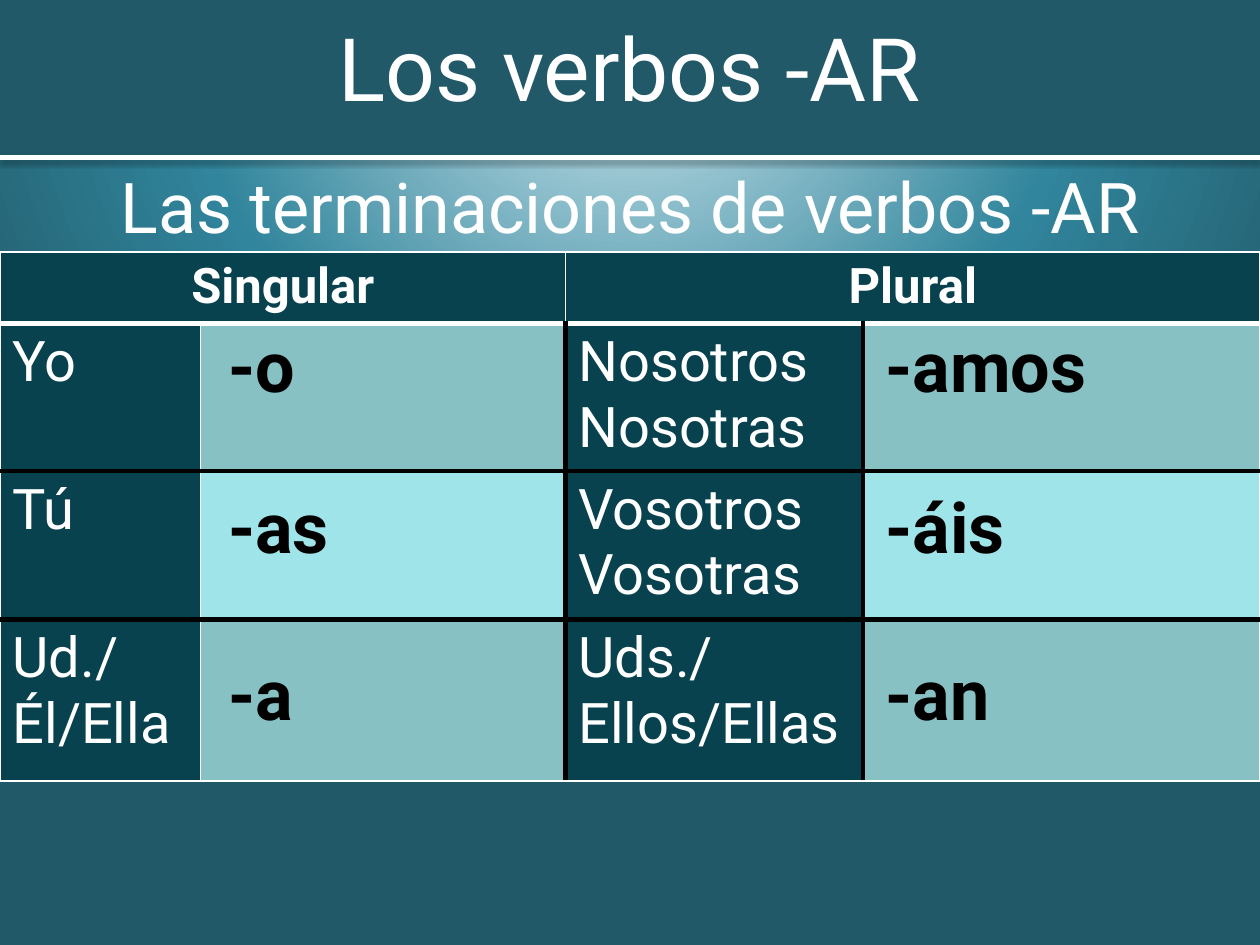
import dataclasses

import pptx
import pptx.dml.color
import pptx.enum.shapes
import pptx.enum.text
import pptx.oxml
import pptx.oxml.ns
import pptx.util
from pptx.util import Inches, Pt

FONT = "Roboto"
WHITE, BLACK = "FFFFFF", "000000"
BANNER, DARK = "215968", "08424E"
BANDS = ["87C1C3", "9FE4E9", "87C1C3"]
NS = pptx.oxml.ns.nsdecls("a", "p")
CENTER = pptx.enum.text.PP_ALIGN.CENTER
THIN, THICK, HEAVY = (WHITE, 1), (WHITE, 3), (BLACK, 3)


@dataclasses.dataclass
class TextStyle:
    size: int
    color: str = WHITE
    bold: bool = False
    align: object = None


@dataclasses.dataclass
class Ending:
    text: str
    left: float
    top: float
    width: float


TITLE = TextStyle(50, align=CENTER)
SUBTITLE = TextStyle(40, align=CENTER)
HEADER = TextStyle(28, bold=True, align=CENTER)
PRONOUN = TextStyle(32)
ENDING = TextStyle(40, BLACK, bold=True)

COLUMNS = [1.59, 2.9, 2.36, 3.15]
ROWS = [0.56, 1.17, 1.18, 1.28]
PRONOUNS = [
    (["Yo"], ["Nosotros", "Nosotras"]),
    (["Tú"], ["Vosotros", "Vosotras"]),
    (["Ud./Él/Ella"], ["Uds./Ellos/Ellas"]),
]
ENDINGS = [
    Ending("-o", 1.71, 2.55, 2.46),
    Ending("-as", 1.71, 3.83, 2.34),
    Ending("-a", 1.71, 5.15, 2.46),
    Ending("-amos", 6.93, 2.55, 2.82),
    Ending("-áis", 6.93, 3.83, 2.52),
    Ending("-an", 6.93, 5.15, 2.4),
]


def rgb(value: str) -> pptx.dml.color.RGBColor:
    return pptx.dml.color.RGBColor.from_string(value)


def write(tf, lines: list[str], style: TextStyle) -> None:
    for i, line in enumerate(lines):
        p = tf.add_paragraph() if i else tf.paragraphs[0]
        p.alignment = style.align
        r = p.add_run()
        r.text = line
        r.font.name = FONT
        r.font.size = Pt(style.size)
        r.font.bold = style.bold
        r.font.color.rgb = rgb(style.color)


def set_background(s) -> None:
    """Radial gradient centred above the slide."""
    stops = "".join(
        f'<a:gs pos="{pos * 1000}"><a:srgbClr val="{color}"/></a:gs>'
        for pos, color in [(0, "DBEEF4"), (57, "31859C"), (100, BANNER)]
    )
    bg = pptx.oxml.parse_xml(
        f'<p:bg {NS}><p:bgPr><a:gradFill rotWithShape="1"><a:gsLst>{stops}</a:gsLst>'
        '<a:path path="circle"><a:fillToRect l="50000" t="-80000" r="50000" b="180000"/>'
        "</a:path></a:gradFill><a:effectLst/></p:bgPr></p:bg>"
    )
    s._element.cSld.insert(0, bg)


def add_text(s, text: str, top: float, height: float, style: TextStyle):
    tf = s.shapes.add_textbox(0, Inches(top), Inches(10), Inches(height)).text_frame
    tf.word_wrap = True
    write(tf, [text], style)
    return tf


def add_banner(s) -> None:
    sp = s.shapes.add_shape(
        pptx.enum.shapes.MSO_SHAPE.RECTANGLE, 0, 0, Inches(10), Inches(1.25)
    )
    sp.shadow.inherit = False
    sp.fill.solid()
    sp.fill.fore_color.rgb = rgb(BANNER)
    sp.line.fill.background()


def add_rule(s) -> None:
    """White line with a soft shadow under the banner."""
    line = s.shapes.add_connector(
        pptx.enum.shapes.MSO_CONNECTOR.STRAIGHT, 0, Inches(1.25), Inches(10), Inches(1.25)
    )
    line.line.color.rgb = rgb(WHITE)
    line.line.width = Pt(3)
    line._element.spPr.append(pptx.oxml.parse_xml(
        f'<a:effectLst {NS}><a:outerShdw blurRad="{Pt(3.1)}" dist="{Pt(1.6)}" dir="5400000" '
        f'rotWithShape="0"><a:srgbClr val="{BLACK}"><a:alpha val="38000"/></a:srgbClr>'
        "</a:outerShdw></a:effectLst>"
    ))


def set_borders(cell, left=None, right=None, top=None, bottom=None) -> None:
    """Each side is a (colour, points) pair, or None for no line."""
    tc_pr = cell._tc.get_or_add_tcPr()
    for side, border in zip("LRTB", (left, right, top, bottom)):
        color, width = border or (WHITE, 0)
        fill = f'<a:solidFill><a:srgbClr val="{color}"/></a:solidFill>' if border else "<a:noFill/>"
        tc_pr.append(pptx.oxml.parse_xml(f'<a:ln{side} {NS} w="{Pt(width)}">{fill}</a:ln{side}>'))


def add_table(s, left: float, top: float, columns: list[float], rows: list[float]):
    table = s.shapes.add_table(
        len(rows), len(columns), Inches(left), Inches(top),
        Inches(sum(columns)), Inches(sum(rows)),
    ).table
    table.first_row = table.horz_banding = False
    for column, width in zip(table.columns, columns):
        column.width = Inches(width)
    for row, height in zip(table.rows, rows):
        row.height = Inches(height)
    return table


def add_pronoun_table(s) -> None:
    table = add_table(s, 0, 2, COLUMNS, ROWS)
    last = len(ROWS) - 1
    for i in range(len(ROWS)):
        for j in range(len(COLUMNS)):
            cell = table.cell(i, j)
            set_borders(
                cell,
                left=HEAVY if i and j >= 2 else THIN,
                right=HEAVY if i and j in (1, 2) else THIN,
                top=THIN if i == 0 else THICK if i == 1 else HEAVY,
                bottom=THICK if i == 0 else THIN if i == last else HEAVY,
            )
            cell.fill.solid()
            cell.fill.fore_color.rgb = rgb(BANDS[i - 1] if i and j % 2 else DARK)
    for j, heading in [(0, "Singular"), (2, "Plural")]:
        table.cell(0, j).merge(table.cell(0, j + 1))
        write(table.cell(0, j).text_frame, [heading], HEADER)
    for i, (singular, plural) in enumerate(PRONOUNS, 1):
        write(table.cell(i, 0).text_frame, singular, PRONOUN)
        write(table.cell(i, 2).text_frame, plural, PRONOUN)


def add_ending(s, ending: Ending) -> None:
    cell = add_table(s, ending.left, ending.top, [ending.width], [0.77]).cell(0, 0)
    set_borders(cell)
    cell.fill.background()
    write(cell.text_frame, [ending.text], ENDING)


def main() -> None:
    prs = pptx.Presentation()
    prs.slide_width, prs.slide_height = Inches(10), Inches(7.5)
    s = prs.slides.add_slide(prs.slide_layouts[6])
    set_background(s)
    add_banner(s)
    subtitle = add_text(s, "Las terminaciones de verbos -AR", 1.25, 5.2, SUBTITLE)
    subtitle.paragraphs[0].space_before = Pt(3)
    add_rule(s)
    title = add_text(s, "Los verbos -AR", 0, 1.06, TITLE)
    title.vertical_anchor = pptx.enum.text.MSO_ANCHOR.MIDDLE
    add_pronoun_table(s)
    for ending in ENDINGS:
        add_ending(s, ending)
    prs.save("out.pptx")


if __name__ == "__main__":
    main()
